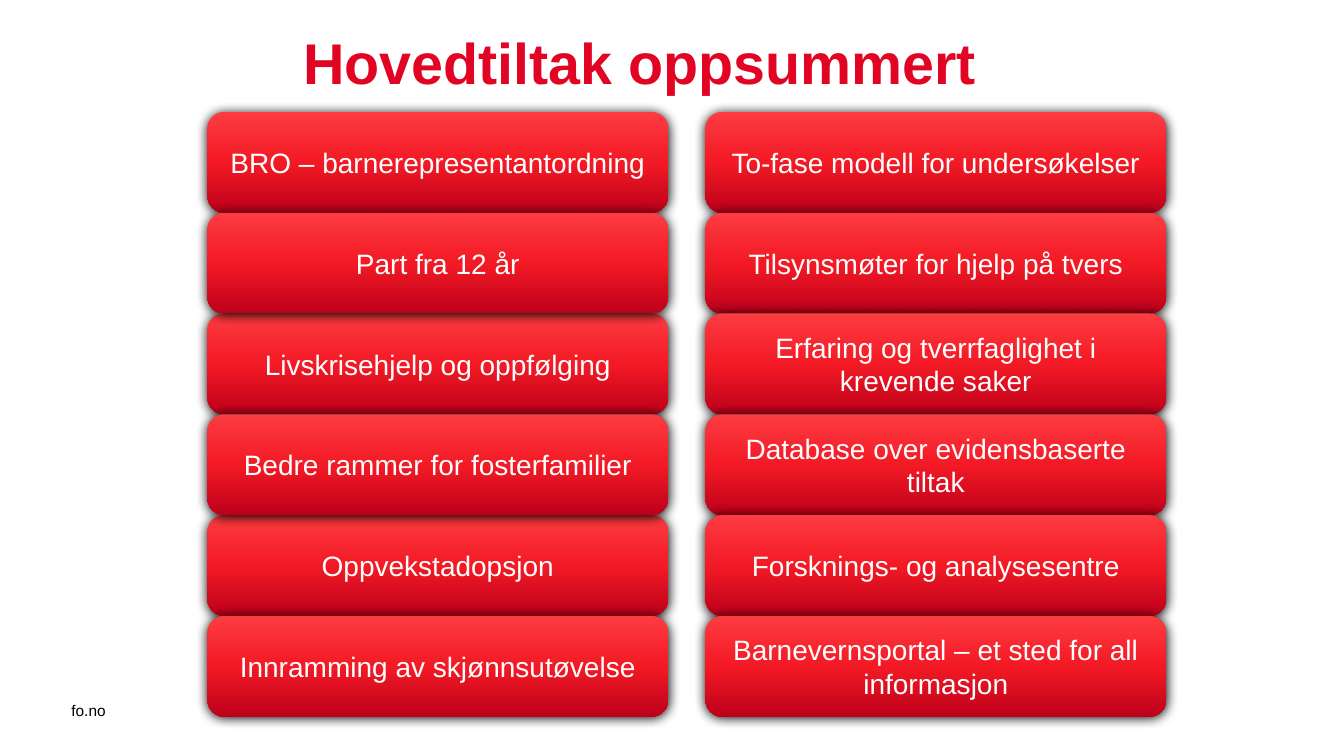
from copy import deepcopy

from lxml.etree import SubElement
from pptx import Presentation
from pptx.dml.color import RGBColor
from pptx.enum.shapes import MSO_SHAPE
from pptx.enum.text import MSO_ANCHOR, MSO_AUTO_SIZE, PP_ALIGN
from pptx.oxml.ns import qn
from pptx.util import Cm, Pt

COLORS = {
    "title": "E20523",
    "text": "FFFFFF",
    "note": "000000",
    "shade": "000000",
    "light": "FD3B41",
    "mid": "F31A25",
    "dark": "BD001A",
}
FONT = "Arial"

LEFT = [
    "BRO – barnerepresentantordning",
    "Part fra 12 år",
    "Livskrisehjelp og oppfølging",
    "Bedre rammer for fosterfamilier",
    "Oppvekstadopsjon",
    "Innramming av skjønnsutøvelse",
]
RIGHT = [
    "To-fase modell for undersøkelser",
    "Tilsynsmøter for hjelp på tvers",
    "Erfaring og tverrfaglighet i krevende saker",
    "Database over evidensbaserte tiltak",
    "Forsknings- og analysesentre",
    "Barnevernsportal – et sted for all informasjon",
]
WIDTH, HEIGHT, TOP = 11.61, 2.54, 2.82


def write(shape, text, size, color, bold=False, align=PP_ALIGN.LEFT,
          anchor=MSO_ANCHOR.TOP, wrap=True, fit=MSO_AUTO_SIZE.NONE):
    frame = shape.text_frame
    frame.word_wrap = wrap
    frame.auto_size = fit
    frame.vertical_anchor = anchor
    line = frame.paragraphs[0]
    line.alignment = align
    run = line.add_run()
    run.text = text
    run.font.name = FONT
    run.font.size = Pt(size)
    run.font.bold = bold
    run.font.color.rgb = RGBColor.from_string(COLORS[color])


class Deck:
    def __init__(self):
        self.show = Presentation()
        self.show.slide_width = Cm(33.87)
        self.show.slide_height = Cm(19.05)
        self.slide = self.show.slides.add_slide(self.show.slide_layouts[5])

    def title(self, text):
        shape = self.slide.shapes.title
        shape.left, shape.top = Cm(7.39), Cm(0.56)
        shape.width, shape.height = Cm(17.63), Cm(2.01)
        write(shape, text, 41, "title", bold=True, wrap=False)

    def note(self, text, x, y, w, h):
        box = self.slide.shapes.add_textbox(Cm(x), Cm(y), Cm(w), Cm(h))
        write(box, text, 11, "note", fit=MSO_AUTO_SIZE.SHAPE_TO_FIT_TEXT)

    def card(self, text, x, y):
        shape = self.slide.shapes.add_shape(
            MSO_SHAPE.ROUNDED_RECTANGLE, Cm(x), Cm(y), Cm(WIDTH), Cm(HEIGHT))
        shape.line.fill.background()
        self.blend(shape)
        self.shade(shape)
        write(shape, text, 20, "text", align=PP_ALIGN.CENTER,
              anchor=MSO_ANCHOR.MIDDLE)

    def blend(self, shape):
        """Fill from light at the top, through mid, to dark."""
        fill = shape.fill
        fill.gradient()
        fill.gradient_angle = 270
        stops = shape._element.spPr.find(".//" + qn("a:gsLst"))
        stops.append(deepcopy(stops[0]))
        tones = ("light", "mid", "dark")
        for stop, place, tone in zip(fill.gradient_stops, (0, 0.5, 1), tones):
            stop.position = place
            stop.color.rgb = RGBColor.from_string(COLORS[tone])

    def shade(self, shape):
        """Cast a soft shadow downwards."""
        shape.shadow.inherit = False
        effects = shape._element.spPr.find(qn("a:effectLst"))
        outer = SubElement(effects, qn("a:outerShdw"), blurRad=str(Pt(8.5)),
                           dist=str(Pt(1)), dir="5400000", rotWithShape="0")
        SubElement(outer, qn("a:srgbClr"), val=COLORS["shade"])

    def column(self, texts, x, order):
        """Stack cards by row; order runs from the back card to the front."""
        for row in order:
            self.card(texts[row], x, TOP + row * HEIGHT)


def main():
    deck = Deck()
    deck.title("Hovedtiltak oppsummert")
    deck.note("fo.no", 1.55, 17.55, 2.39, 0.74)
    deck.column(LEFT, 5.23, (0, 2, 1, 4, 3, 5))
    deck.column(RIGHT, 17.78, range(len(RIGHT)))
    deck.show.save("out.pptx")


if __name__ == "__main__":
    main()
